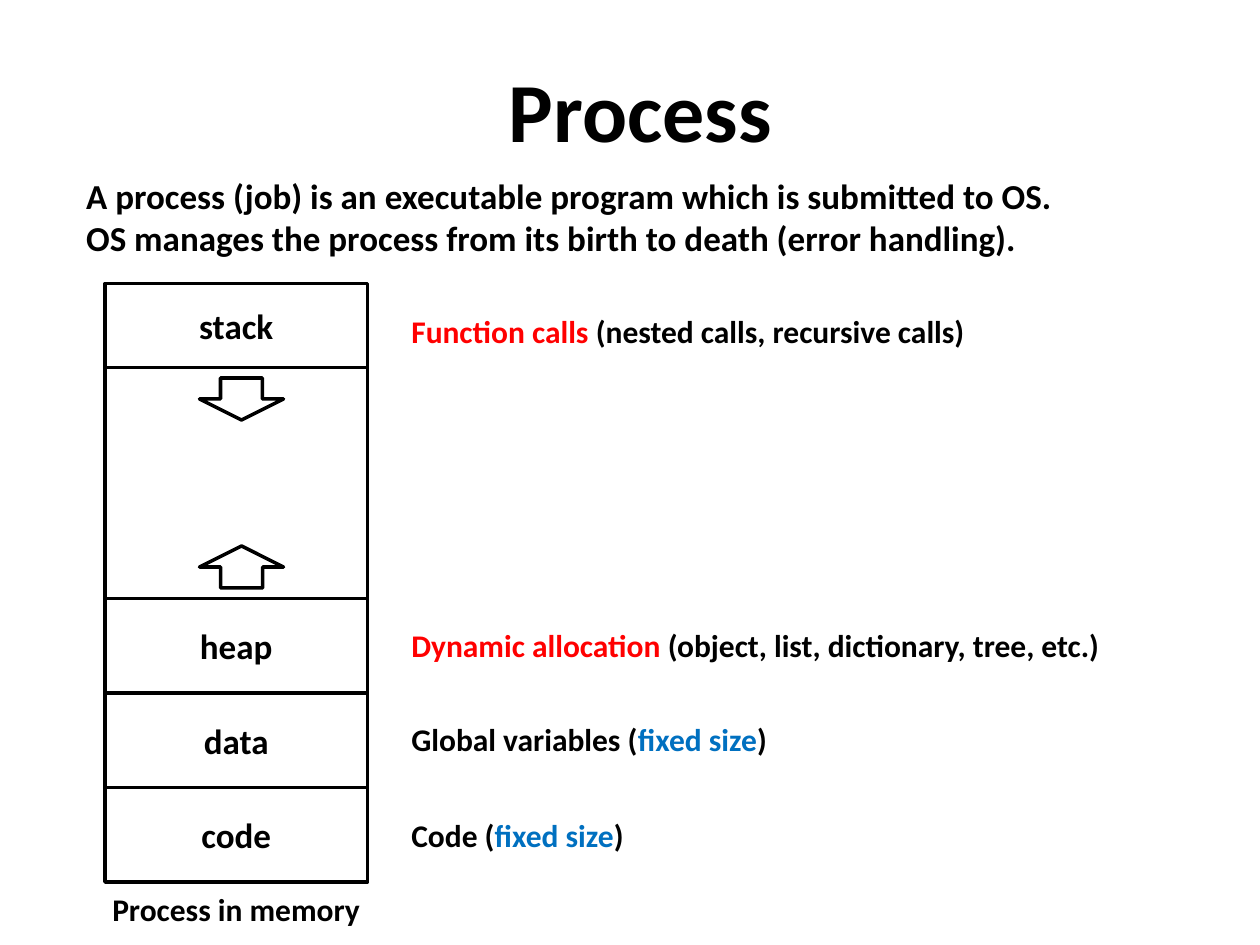
from lxml.etree import SubElement
from pptx import Presentation
from pptx.dml.color import RGBColor
from pptx.enum.shapes import MSO_SHAPE as Shape
from pptx.enum.text import MSO_ANCHOR as Anchor, MSO_AUTO_SIZE as AutoSize, PP_ALIGN as Align
from pptx.oxml.ns import qn
from pptx.util import Pt

BLACK = RGBColor(0x00, 0x00, 0x00)
RED = RGBColor(0xFF, 0x00, 0x00)
BLUE = RGBColor(0x00, 0x70, 0xC0)

MEMORY_LEFT, MEMORY_TOP, MEMORY_WIDTH = 60, 162, 150
SEGMENTS = [("stack", 48), ("", 132), ("heap", 54), ("data", 54), ("code", 54)]
GROWTH_ARROWS = [(216, 0), (312, 180)]
NOTES = [
    (175, [("Function calls", RED), (" (nested calls, recursive calls)", BLACK)]),
    (354, [("Dynamic allocation ", RED), ("(object, list, dictionary, tree, etc.)", BLACK)]),
    (408, [("Global variables (", BLACK), ("fixed size", BLUE), (")", BLACK)]),
    (463, [("Code (", BLACK), ("fixed size", BLUE), (")", BLACK)]),
]
DEFINITION = [
    "A process (job) is an executable program which is submitted to OS.",
    "OS manages the process from its birth to death (error handling).",
]


def style(para, size, align=Align.LEFT):
    para.alignment = align
    para.font.name = "Calibri"
    para.font.size = Pt(size)
    para.font.bold = True
    para.font.color.rgb = BLACK


def place(shape, left, top, width, height):
    shape.left, shape.top = Pt(left), Pt(top)
    shape.width, shape.height = Pt(width), Pt(height)


def fill_placeholder(holder, lines, bounds, size, align):
    place(holder, *bounds)
    frame = holder.text_frame
    frame.text = "\n".join(lines)
    frame.auto_size = AutoSize.NONE
    frame.vertical_anchor = Anchor.TOP
    for para in frame.paragraphs:
        style(para, size, align)
        para.space_before = Pt(0)


def hang_without_bullets(holder, indent):
    for para in holder.text_frame.paragraphs:
        properties = para._p.get_or_add_pPr()
        properties.set("marL", str(Pt(indent)))
        properties.set("indent", str(-Pt(indent)))
        SubElement(properties, qn("a:buNone"))


def add_outline(page, kind, left, top, width, height):
    shape = page.shapes.add_shape(kind, Pt(left), Pt(top), Pt(width), Pt(height))
    shape.shadow.inherit = False
    shape.fill.background()
    shape.line.color.rgb = BLACK
    shape.line.width = Pt(2)
    return shape


def add_memory(page):
    top = MEMORY_TOP
    for name, height in SEGMENTS:
        box = add_outline(page, Shape.RECTANGLE, MEMORY_LEFT, top, MEMORY_WIDTH, height)
        if name:
            box.text_frame.text = name
            box.text_frame.vertical_anchor = Anchor.MIDDLE
            style(box.text_frame.paragraphs[0], 20, Align.CENTER)
        top += height
    for arrow_top, rotation in GROWTH_ARROWS:
        arrow = add_outline(page, Shape.DOWN_ARROW, 114, arrow_top, 48, 24)
        arrow.rotation = rotation


def add_label(page, left, top, width, spans, align=Align.LEFT):
    box = page.shapes.add_textbox(Pt(left), Pt(top), Pt(width), Pt(29))
    box.text_frame.word_wrap = True
    para = box.text_frame.paragraphs[0]
    style(para, 18, align)
    for text, color in spans:
        span = para.add_run()
        span.text = text
        span.font.color.rgb = color


def main():
    deck = Presentation()
    deck.slide_width, deck.slide_height = Pt(720), Pt(540)
    page = deck.slides.add_slide(deck.slide_layouts[1])
    title, body = page.placeholders
    fill_placeholder(title, ["Process"], (42, 30, 648, 65.5), 48, Align.CENTER)
    fill_placeholder(body, DEFINITION, (42, 96, 648, 55.5), 20, Align.LEFT)
    hang_without_bullets(body, 36)
    add_memory(page)
    for top, spans in NOTES:
        add_label(page, 228, top, 462, spans)
    add_label(page, 48, 505, 174, [("Process in memory", BLACK)], Align.CENTER)
    deck.save("out.pptx")


if __name__ == "__main__":
    main()
